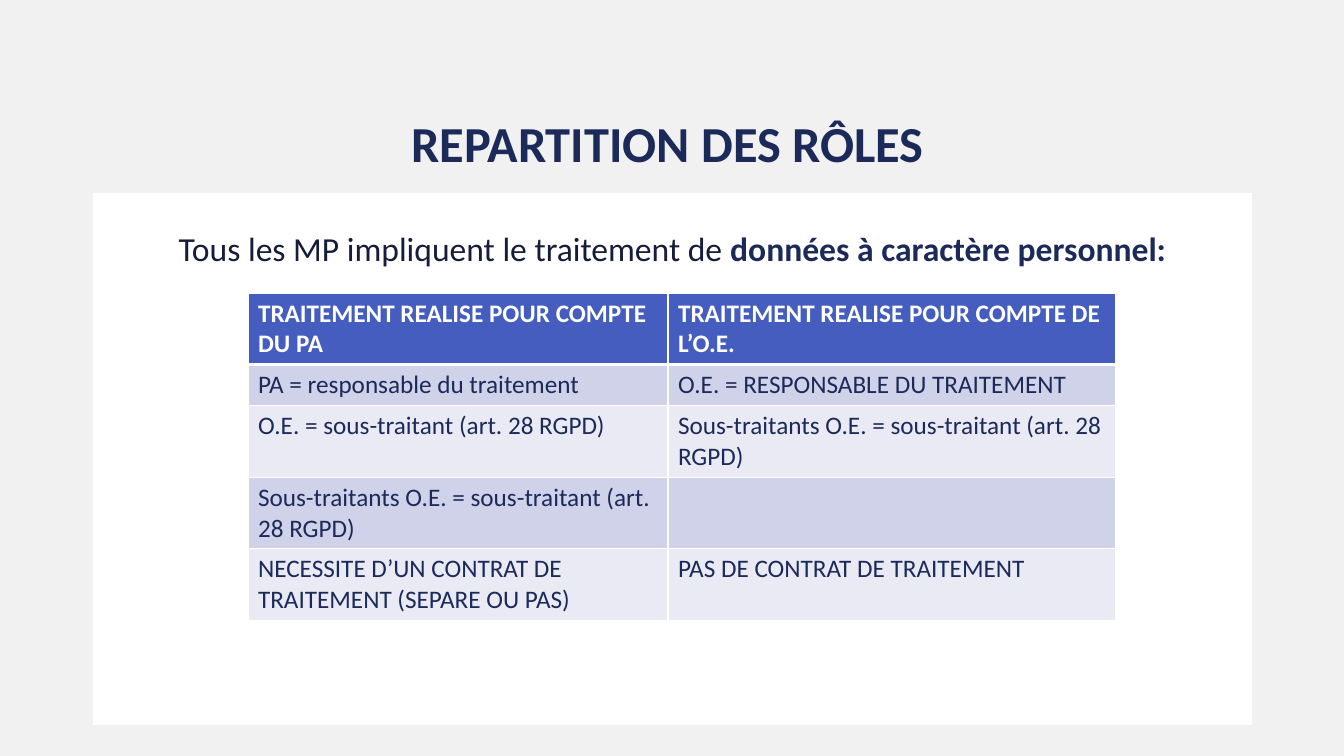
from lxml import etree
from pptx import Presentation
from pptx import util as u
from pptx.dml.color import RGBColor
from pptx.enum import text
from pptx.oxml.ns import qn

SCALE = 914400 / 100.8
FONT = "Calibri"
HUES = {"back": "F1F1F1", "panel": "FFFFFF", "title": "1C2A5A",
        "lead": "161D3A", "ink": "1C2A59", "head": "455DBE",
        "odd": "CFD2E8", "even": "E9EAF4", "line": "FFFFFF"}
ROWS = [
    ("TRAITEMENT REALISE POUR COMPTE DU PA",
     "TRAITEMENT REALISE POUR COMPTE DE L’O.E."),
    ("PA = responsable du traitement", "O.E. = RESPONSABLE DU TRAITEMENT"),
    ("O.E. = sous-traitant (art. 28 RGPD)",
     "Sous-traitants O.E. = sous-traitant (art. 28 RGPD)"),
    ("Sous-traitants O.E. = sous-traitant (art. 28 RGPD)", ""),
    ("NECESSITE D’UN CONTRAT DE TRAITEMENT (SEPARE OU PAS)",
     "PAS DE CONTRAT DE TRAITEMENT"),
]


def px(n):
    return u.Emu(round(n * SCALE))


def hue(name):
    return RGBColor.from_string(HUES[name])


def apply(obj, form):
    for key, val in form.items():
        setattr(obj, key, val)


def paint(fill, name):
    fill.solid()
    fill.fore_color.rgb = hue(name)


def write(para, words, size, name, bold=False):
    run = para.add_run()
    run.text = words
    apply(run.font, {"name": FONT, "size": u.Pt(size), "bold": bold})
    run.font.color.rgb = hue(name)


def place(shape, box, pads, anchor):
    """Move a placeholder and return its centred first paragraph."""
    apply(shape, dict(zip(("left", "top", "width", "height"), map(px, box))))
    frame = shape.text_frame
    sides = ("margin_left", "margin_top", "margin_right", "margin_bottom")
    apply(frame, dict(zip(sides, map(px, pads))))
    apply(frame, {"word_wrap": True, "vertical_anchor": anchor,
                  "auto_size": text.MSO_AUTO_SIZE.NONE})
    para = frame.paragraphs[0]
    apply(para, {"alignment": text.PP_ALIGN.CENTER, "line_spacing": 0.9,
                 "space_before": u.Pt(0)})
    return para


def title(slide, box):
    para = place(slide.shapes.title, box, (0, 5, 10, 20),
                 text.MSO_ANCHOR.BOTTOM)
    write(para, "REPARTITION DES RÔLES", 36, "title", True)


def panel(slide, box):
    body = slide.placeholders[1]
    paint(body.fill, "panel")
    para = place(body, box, (39,) * 4, text.MSO_ANCHOR.TOP)
    props = para._p.get_or_add_pPr()
    props.set("marL", "0")
    props.set("indent", "0")
    etree.SubElement(props, qn("a:buNone"))
    write(para, "Tous les MP impliquent le traitement de ", 24, "lead")
    write(para, "données à caractère personnel:", 24, "ink", True)


def edge(cell, side, points):
    line = etree.SubElement(cell._tc.get_or_add_tcPr(), qn("a:ln" + side),
                            w=str(u.Pt(points)))
    fill = etree.SubElement(line, qn("a:solidFill"))
    etree.SubElement(fill, qn("a:srgbClr"), val=HUES["line"])


def roles(slide, box, cols, heights):
    grid = slide.shapes.add_table(len(ROWS), len(cols), *map(px, box)).table
    for col, wide in zip(grid.columns, cols):
        col.width = px(wide)
    for r, (row, high) in enumerate(zip(ROWS, heights)):
        grid.rows[r].height = px(high)
        tone = "head" if r == 0 else "odd" if r % 2 else "even"
        for c, words in enumerate(row):
            cell = grid.cell(r, c)
            # Thick rule between the header and the first row
            for side in "LRTB":
                thick = (r, side) in ((0, "B"), (1, "T"))
                edge(cell, side, 3 if thick else 1)
            paint(cell.fill, tone)
            if words:
                write(cell.text_frame.paragraphs[0], words, 18,
                      "panel" if r == 0 else "ink", r == 0)


def main():
    deck = Presentation()
    apply(deck, {"slide_width": px(1344), "slide_height": px(756)})
    slide = deck.slides.add_slide(deck.slide_layouts[1])
    paint(slide.background.fill, "back")
    left, wide = 93, 1159
    title(slide, (left, 93, wide, 100))
    panel(slide, (left, 193, wide, 532))
    roles(slide, (248, 293, 868, 325), (420, 448), (71, 41, 71, 71, 71))
    deck.save("out.pptx")


if __name__ == "__main__":
    main()
